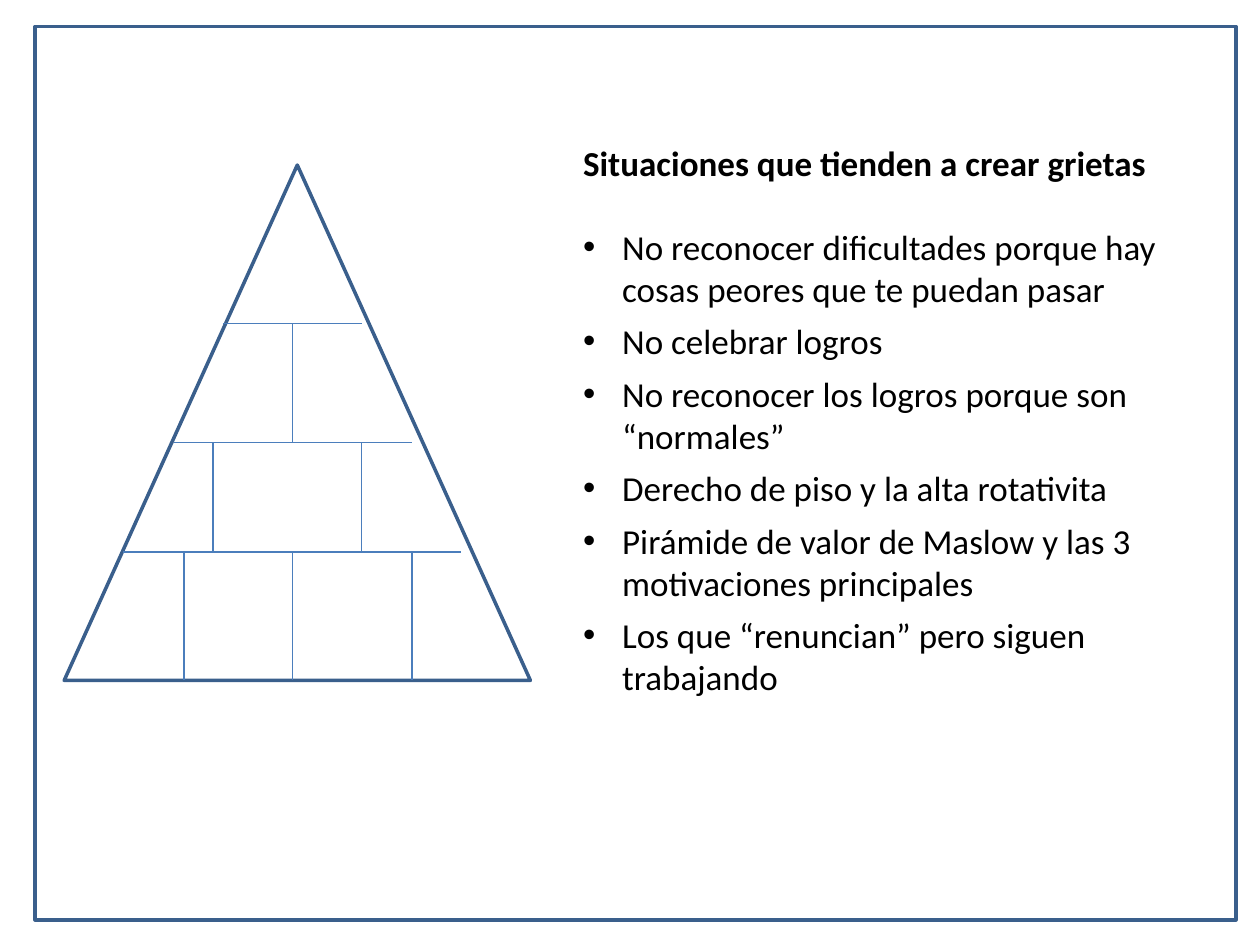
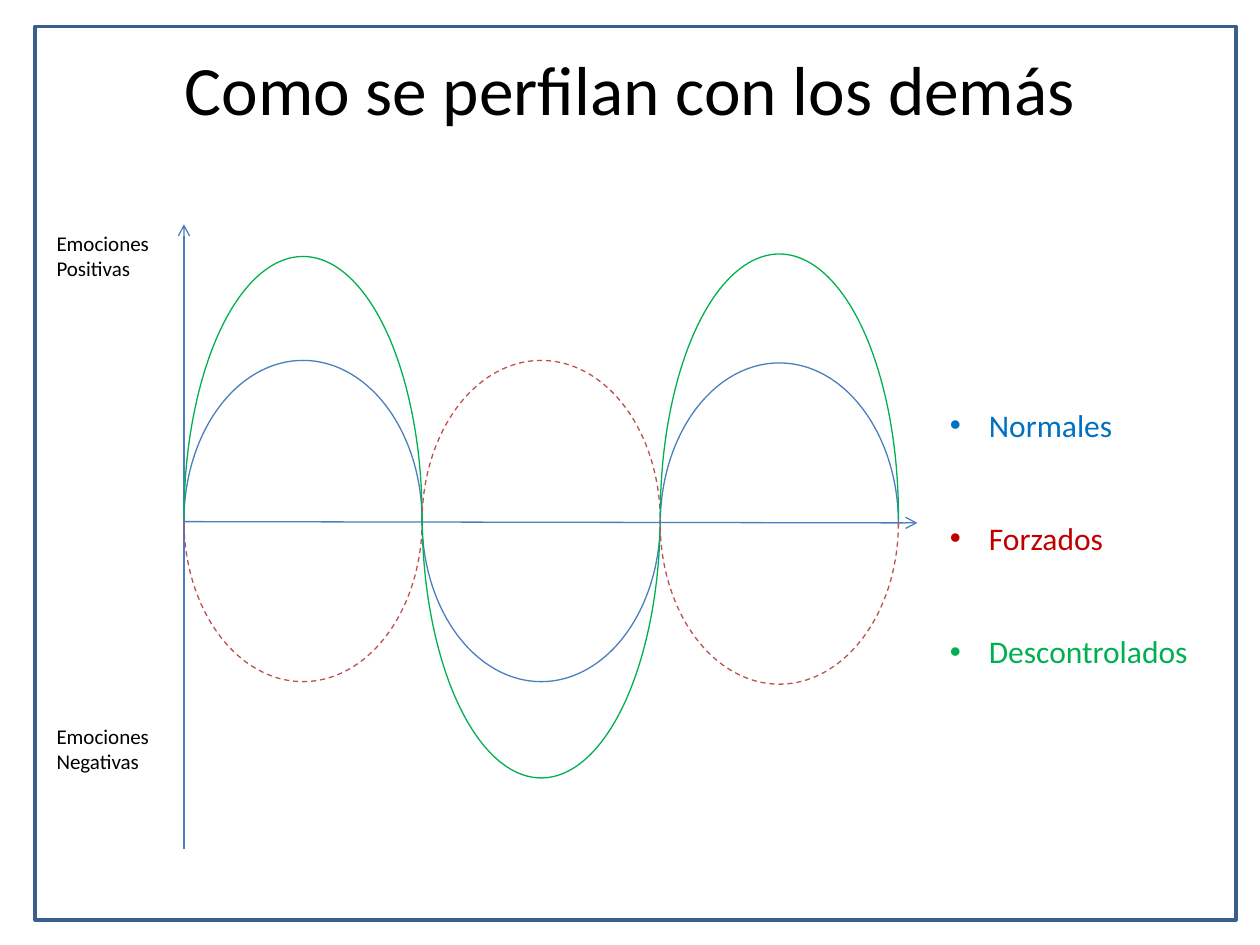
import pptx
import pptx.util
import pptx.dml.color
import pptx.enum.dml
import pptx.enum.shapes
import pptx.enum.text
import pptx.oxml
from pptx.util import Inches

FONT = "Calibri"
EDGE, BLUE, RED, GREEN = "3A5F8C", "4B7EBC", "C0504D", "00B050"
BLACK = "000000"
SHAPE = pptx.enum.shapes.MSO_SHAPE
LOBE = 1.89
AXIS = 1.46


def tint(color, code):
    """Set a colour format from a hex string."""
    color.rgb = pptx.dml.color.RGBColor.from_string(code)


def child(parent, tag, **attrs):
    """Append one drawing element and return it."""
    node = pptx.oxml.parse_xml(f'<a:{tag} xmlns:a="http://schemas.openxmlformats.org/drawingml/2006/main"/>')
    for name, value in attrs.items():
        node.set(name, value)
    parent.append(node)
    return node


def outline(slide, kind, left, top, width, height, code, weight):
    """Draw an unfilled shape with a coloured line."""
    shape = slide.shapes.add_shape(kind, Inches(left), Inches(top), Inches(width), Inches(height))
    shape.shadow.inherit = False
    shape.fill.background()
    tint(shape.line.color, code)
    shape.line.width = pptx.util.Pt(weight)
    return shape


def frame(slide):
    """Draw the border that every slide shares."""
    outline(slide, SHAPE.RECTANGLE, 0.28, 0.21, 9.53, 7.09, EDGE, 2)


def rule(slide, x1, y1, x2, y2, arrow=False):
    """Draw a thin straight line, with an arrowhead if asked."""
    line = slide.shapes.add_connector(
        pptx.enum.shapes.MSO_CONNECTOR.STRAIGHT, Inches(x1), Inches(y1), Inches(x2), Inches(y2))
    tint(line.line.color, BLUE)
    line.line.width = pptx.util.Pt(0.75)
    if arrow:
        child(line.line._get_or_add_ln(), "tailEnd", type="arrow")
    child(line._element.spPr, "effectLst")


def arc(slide, lobe, top, tall, up, code, dash=False):
    """Draw half an ellipse above or below the axis."""
    left = AXIS + lobe * LOBE + (LOBE - tall) / 2
    shape = outline(slide, SHAPE.ARC, left, top, tall, LOBE, code, 0.75)
    shape.adjustments[0] = 162
    shape.adjustments[1] = 54.942
    shape.rotation = 270 if up else 90
    if dash:
        shape.line.dash_style = pptx.enum.dml.MSO_LINE.DASH


def write(para, text, size, code=BLACK, bold=False):
    """Add one formatted run to a paragraph."""
    run = para.add_run()
    run.text = text
    run.font.name = FONT
    run.font.size = pptx.util.Pt(size)
    run.font.bold = bold
    tint(run.font.color, code)


def box(slide, left, top, width, height):
    """Add a wrapping text box and return its text frame."""
    text = slide.shapes.add_textbox(Inches(left), Inches(top), Inches(width), Inches(height)).text_frame
    text.word_wrap = True
    text.auto_size = pptx.enum.text.MSO_AUTO_SIZE.SHAPE_TO_FIT_TEXT
    return text


def bullet(para):
    """Give a paragraph a hanging bullet."""
    props = para._p.get_or_add_pPr()
    props.set("marL", str(Inches(0.31)))
    props.set("indent", str(-Inches(0.31)))
    child(props, "buFont", typeface="Arial")
    child(props, "buChar", char="•")


def cracks(deck):
    """Build the slide with the brick pyramid."""
    slide = deck.slides.add_slide(deck.slide_layouts[6])
    frame(slide)
    outline(slide, SHAPE.FLOWCHART_EXTRACT, 0.51, 1.31, 3.7, 4.09, EDGE, 2)
    rows = [
        (2.57, 1.77, 2.87, 3.51, [2.32]),
        (3.51, 1.38, 3.27, 4.38, [1.69, 2.87]),
        (4.38, 0.98, 3.66, 5.4, [1.46, 2.32, 3.27]),
    ]
    for top, left, right, base, joints in rows:
        rule(slide, left, top, right, top)
        for joint in joints:
            rule(slide, joint, top, joint, base)
    text = box(slide, 4.53, 1.07, 5.04, 4.56)
    head = text.paragraphs[0]
    head.space_after = pptx.util.Pt(24)
    write(head, "Situaciones que tienden a crear grietas", 20, bold=True)
    for item in (
        "No reconocer dificultades porque hay cosas peores que te puedan pasar",
        "No celebrar logros",
        "No reconocer los logros porque son “normales”",
        "Derecho de piso y la alta rotativita",
        "Pirámide de valor de Maslow y las 3 motivaciones principales",
        "Los que “renuncian” pero siguen trabajando",
    ):
        para = text.add_paragraph()
        bullet(para)
        para.space_after = pptx.util.Pt(6)
        write(para, item, 20)


def moods(deck):
    """Build the slide with the emotion curves."""
    slide = deck.slides.add_slide(deck.slide_layouts[5])
    frame(slide)
    title = slide.shapes.title
    title.left, title.top, title.width, title.height = map(Inches, (0.5, 0.3, 9, 1.25))
    text = title.text_frame
    text.vertical_anchor = pptx.enum.text.MSO_ANCHOR.TOP
    text.margin_top = Inches(0.07)
    text.paragraphs[0].alignment = pptx.enum.text.PP_ALIGN.CENTER
    write(text.paragraphs[0], "Como se perfilan con los demás", 39.6)

    rule(slide, AXIS, 6.74, AXIS, 1.78, True)
    rule(slide, AXIS, 4.14, 7.28, 4.15, True)
    for top, label in ((1.78, "Emociones Positivas"), (5.69, "Emociones Negativas")):
        write(box(slide, 0.35, top, 1.02, 0.5).paragraphs[0], label, 12)

    for lobe, (low, high) in enumerate([(3.19, 3.17), (3.19, 3.15), (3.21, 3.15)]):
        up = lobe % 2 == 0
        arc(slide, lobe, low, 2.55, up, BLUE)
        arc(slide, lobe, low, 2.55, not up, RED, True)
        arc(slide, lobe, high, 4.16, up, GREEN)

    text = box(slide, 7.44, 2.57, 2.28, 2.83)
    names = [("Normales", "0070C0"), ("Forzados", "C00000"), ("Descontrolados", GREEN)]
    for spot, (name, code) in enumerate(names):
        para = text.add_paragraph() if spot else text.paragraphs[0]
        bullet(para)
        para.line_spacing = 3.0
        write(para, name, 18, code)


def main():
    """Build and save the deck."""
    deck = pptx.Presentation()
    deck.slide_width, deck.slide_height = Inches(10), Inches(7.5)
    cracks(deck)
    moods(deck)
    deck.save("out.pptx")


if __name__ == "__main__":
    main()
